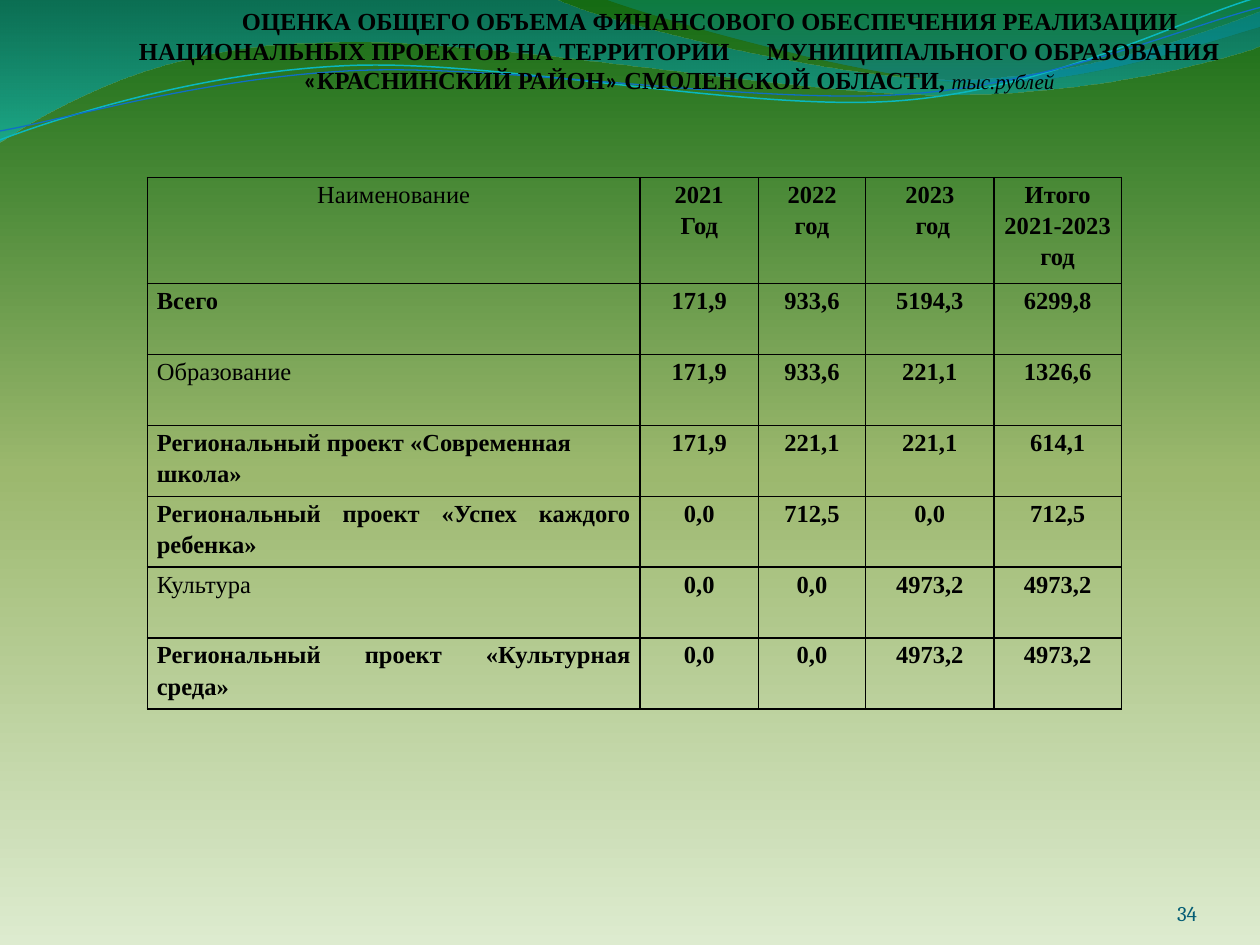
from dataclasses import dataclass
from math import cos, radians, sin
from typing import NamedTuple, Optional

from lxml import etree
from pptx import Presentation
from pptx.dml.color import RGBColor
from pptx.enum.text import MSO_ANCHOR, MSO_AUTO_SIZE, PP_ALIGN
from pptx.oxml.ns import qn
from pptx.util import Inches, Pt

LEFT, CENTER, RIGHT = PP_ALIGN.LEFT, PP_ALIGN.CENTER, PP_ALIGN.RIGHT
JUSTIFY = PP_ALIGN.JUSTIFY
TOP, BOTTOM = MSO_ANCHOR.TOP, MSO_ANCHOR.BOTTOM
NO_AUTOFIT = MSO_AUTO_SIZE.NONE
TITLE_ONLY = 5


@dataclass(frozen=True)
class Theme:
    text: str = "000000"
    number: str = "045D75"
    serif: str = "Times New Roman"
    sans: str = "Calibri"
    number_font: str = "Cambria"
    body_size: float = 14
    small_size: float = 12
    border_width: float = 1


class Stop(NamedTuple):
    position: int
    color: str
    opacity: int = 100


class Wave(NamedTuple):
    start: tuple
    segments: list  # 2 numbers: straight line, 6 numbers: cubic curve
    stops: Optional[list] = None
    line_color: str = ""
    line_width: float = 0
    rotation: float = 0
    center: tuple = (0, 0)


class Row(NamedTuple):
    name: str
    values: list
    name_bold: bool = True
    name_align: PP_ALIGN = JUSTIFY


THEME = Theme()
BACKGROUND = [Stop(0, "DDEBCF"), Stop(50, "9CB86E"), Stop(100, "156B13")]
FILLED_WAVES = [
    Wave((0, -0.01), [
        (4.4, -0.01), (4.76, 0.17, 6.64, 0.63, 7.58, 0.63),
        (8.53, 0.63, 9.58, 0.26, 10, 0.09), (10.01, 0.36),
        (9.83, 0.44, 8.7, 0.76, 7.46, 0.75),
        (6.22, 0.75, 3.82, 0.28, 2.57, 0.34),
        (1.29, 0.35, 0.46, 0.83, -0.01, 1.13), (0, -0.01),
    ], stops=[Stop(0, "0074A1", 45), Stop(100, "00C6CF", 55)]),
    Wave((4.79, -0.01), [
        (5.09, 0.11, 6.82, 0.62, 7.69, 0.65),
        (8.56, 0.69, 9.61, 0.32, 10, 0.21), (10, 0), (4.79, -0.01),
    ], stops=[Stop(0, "00A1A9", 30), Stop(80, "008BBF", 45)]),
]
LINE_WAVES = [
    Wave((0, 1.11), [
        (0.48, 0.93, 1.58, 0.57, 2.77, 0.52),
        (3.95, 0.47, 5.93, 0.89, 7.13, 0.8),
        (8.33, 0.71, 9.38, 0.15, 9.98, -0.02),
    ], line_color="0AB8BF", line_width=0.85, rotation=-2.7, center=(4.99, 0.58)),
    Wave((0, 1.04), [
        (0.47, 0.96, 1.64, 0.61, 2.83, 0.56),
        (4.03, 0.51, 5.97, 0.83, 7.17, 0.75),
        (8.36, 0.67, 9.41, 0.21, 10, 0.06),
    ], line_color="0F6FC6", line_width=0.75, rotation=-2.7, center=(5, 0.59)),
]
COLUMN_WIDTHS = [3.91, 0.94, 0.85, 1.02, 1.01]
TABLE_HEIGHT, HEADER_HEIGHT = 4.22, 0.84
ROWS = [
    Row("Наименование",
        ["2021\nГод", "2022 год", "2023\n год", "Итого 2021-2023 год"], False, CENTER),
    Row("Всего", ["171,9", "933,6", "5194,3", "6299,8"]),
    Row("Образование", ["171,9", "933,6", "221,1", "1326,6"], False),
    Row("Региональный проект «Современная школа»",
        ["171,9", "221,1", "221,1", "614,1"], name_align=LEFT),
    Row("Региональный проект «Успех каждого ребенка»", ["0,0", "712,5", "0,0", "712,5"]),
    Row("Культура", ["0,0", "0,0", "4973,2", "4973,2"], False),
    Row("Региональный проект «Культурная среда»", ["0,0", "0,0", "4973,2", "4973,2"]),
]
ROW_HEIGHT = (TABLE_HEIGHT - HEADER_HEIGHT) / (len(ROWS) - 1)


def style_font(font, size: float, name: str, color: str,
               bold: bool = False, italic: bool = False) -> None:
    font.size, font.name, font.bold, font.italic = Pt(size), name, bold, italic
    font.color.rgb = RGBColor.from_string(color)


def set_gradient(fill, owner, stops: list, angle: int) -> None:
    """Fill with any number of stops; the angle runs counter-clockwise."""
    fill.gradient()
    fill.gradient_angle = angle
    stop_list = next(owner.iter(qn("a:gsLst")))
    for old_stop in list(stop_list):
        stop_list.remove(old_stop)
    for stop in stops:
        node = etree.SubElement(stop_list, qn("a:gs"), pos=str(stop.position * 1000))
        color = etree.SubElement(node, qn("a:srgbClr"), val=stop.color)
        if stop.opacity < 100:
            etree.SubElement(color, qn("a:alpha"), val=str(stop.opacity * 1000))


def unrotate(point: tuple, wave: Wave) -> tuple:
    """Where the point lies before the shape's rotation is applied."""
    angle = radians(-wave.rotation)
    x, y = point[0] - wave.center[0], point[1] - wave.center[1]
    return (Inches(wave.center[0] + x * cos(angle) - y * sin(angle)),
            Inches(wave.center[1] + x * sin(angle) + y * cos(angle)))


def draw_wave(shapes, wave: Wave) -> None:
    points = [point for segment in wave.segments
              for point in zip(segment[::2], segment[1::2])]
    builder = shapes.build_freeform(*unrotate(wave.start, wave))
    builder.add_line_segments([unrotate(point, wave) for point in points],
                              close=wave.stops is not None)
    shape = builder.convert_to_shape()
    # Join each three points of a curve into one cubic segment
    lines = iter(list(shape._element.iter(qn("a:lnTo"))))
    for segment in wave.segments:
        line = next(lines)
        if len(segment) == 6:
            line.addprevious(curve := etree.Element(qn("a:cubicBezTo")))
            for part in (line, next(lines), next(lines)):
                curve.append(part[0])
                part.getparent().remove(part)
    shape.rotation = wave.rotation
    shape.shadow.inherit = False
    if wave.stops:
        set_gradient(shape.fill, shape._element, wave.stops, 270)
        shape.line.fill.background()
    else:
        shape.fill.background()
        shape.line.color.rgb = RGBColor.from_string(wave.line_color)
        shape.line.width = Pt(wave.line_width)


def add_borders(cell) -> None:
    properties = cell._tc.get_or_add_tcPr()
    for side in ("a:lnL", "a:lnR", "a:lnT", "a:lnB"):
        line = etree.SubElement(properties, qn(side), w=str(Pt(THEME.border_width)))
        solid = etree.SubElement(line, qn("a:solidFill"))
        etree.SubElement(solid, qn("a:srgbClr"), val=THEME.text)


def fill_cell(cell, text: str, align: PP_ALIGN, bold: bool) -> None:
    add_borders(cell)
    cell.fill.background()
    cell.margin_left = cell.margin_right = Pt(5.4)
    cell.margin_top = cell.margin_bottom = 0
    cell.text_frame.text = text
    for paragraph in cell.text_frame.paragraphs:
        paragraph.alignment, paragraph.line_spacing = align, 1.15
        for run in paragraph.runs:
            style_font(run.font, THEME.body_size, THEME.serif, THEME.text, bold)


def draw_table(slide) -> None:
    table = slide.shapes.add_table(
        len(ROWS), len(COLUMN_WIDTHS), Inches(1.17), Inches(1.41),
        Inches(sum(COLUMN_WIDTHS)), Inches(TABLE_HEIGHT)).table
    table.first_row = table.horz_banding = False
    for column, width in zip(table.columns, COLUMN_WIDTHS):
        column.width = Inches(width)
    for index, row in enumerate(ROWS):
        table.rows[index].height = Inches(ROW_HEIGHT if index else HEADER_HEIGHT)
        fill_cell(table.cell(index, 0), row.name, row.name_align, row.name_bold)
        for column, value in enumerate(row.values, start=1):
            fill_cell(table.cell(index, column), value, CENTER, True)


def write_title(slide) -> None:
    title = slide.shapes.title
    title.left, title.top, title.width, title.height = map(Inches, (0.78, 0, 9.22, 1.23))
    frame = title.text_frame
    frame.auto_size, frame.vertical_anchor, frame.word_wrap = NO_AUTOFIT, TOP, True
    paragraph = frame.paragraphs[0]
    paragraph.alignment = CENTER
    paragraph._p.get_or_add_pPr().set("indent", str(Inches(0.49)))
    pieces = [
        ("ОЦЕНКА ОБЩЕГО ОБЪЕМА ФИНАНСОВОГО ОБЕСПЕЧЕНИЯ РЕАЛИЗАЦИИ "
         "НАЦИОНАЛЬНЫХ ПРОЕКТОВ НА ТЕРРИТОРИИ", THEME.serif),
        (" ", THEME.serif), ("МУНИЦИПАЛЬНОГО ОБРАЗОВАНИЯ ", THEME.serif),
        ("«", THEME.sans), ("КРАСНИНСКИЙ РАЙОН", THEME.serif), ("»", THEME.sans),
        (" СМОЛЕНСКОЙ ОБЛАСТИ, ", THEME.serif),
    ]
    for text, font_name in pieces:
        run = paragraph.add_run()
        run.text = text
        style_font(run.font, THEME.body_size, font_name, THEME.text, bold=True)
        if text == " ":  # one widened space makes the gap
            run._r.get_or_add_rPr().set("spc", "1750")
    unit = paragraph.add_run()
    unit.text = "тыс.рублей"
    style_font(unit.font, THEME.small_size, THEME.serif, THEME.text, italic=True)
    slide.shapes._spTree.append(title._element)  # bring to front


def write_slide_number(slide) -> None:
    box = slide.shapes.add_textbox(*map(Inches, (8.67, 6.95, 0.83, 0.4)))
    frame = box.text_frame
    frame.word_wrap, frame.vertical_anchor = True, BOTTOM
    frame.margin_left = frame.margin_right = frame.margin_top = frame.margin_bottom = 0
    frame.text = "34"
    paragraph = frame.paragraphs[0]
    paragraph.alignment = RIGHT
    style_font(paragraph.runs[0].font, THEME.small_size, THEME.number_font, THEME.number)


def main() -> None:
    presentation = Presentation()
    presentation.slide_width, presentation.slide_height = Inches(10), Inches(7.5)
    slide = presentation.slides.add_slide(presentation.slide_layouts[TITLE_ONLY])
    # Backdrop
    set_gradient(slide.background.fill, slide._element, BACKGROUND, 90)
    for wave in FILLED_WAVES:
        draw_wave(slide.shapes, wave)
    line_group = slide.shapes.add_group_shape()
    for wave in LINE_WAVES:
        draw_wave(line_group.shapes, wave)
    # Content
    write_slide_number(slide)
    draw_table(slide)
    write_title(slide)
    presentation.save("out.pptx")


if __name__ == "__main__":
    main()
